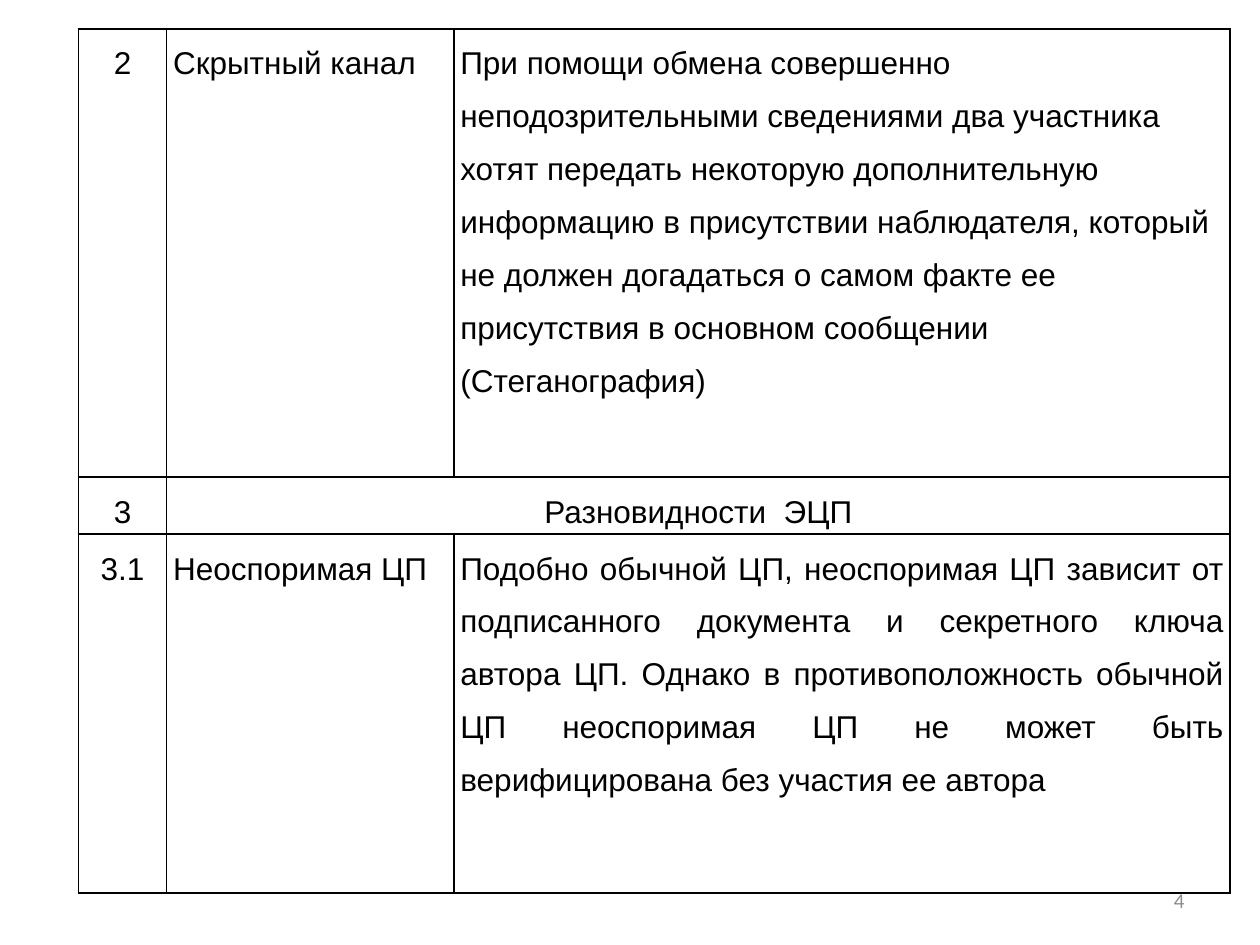
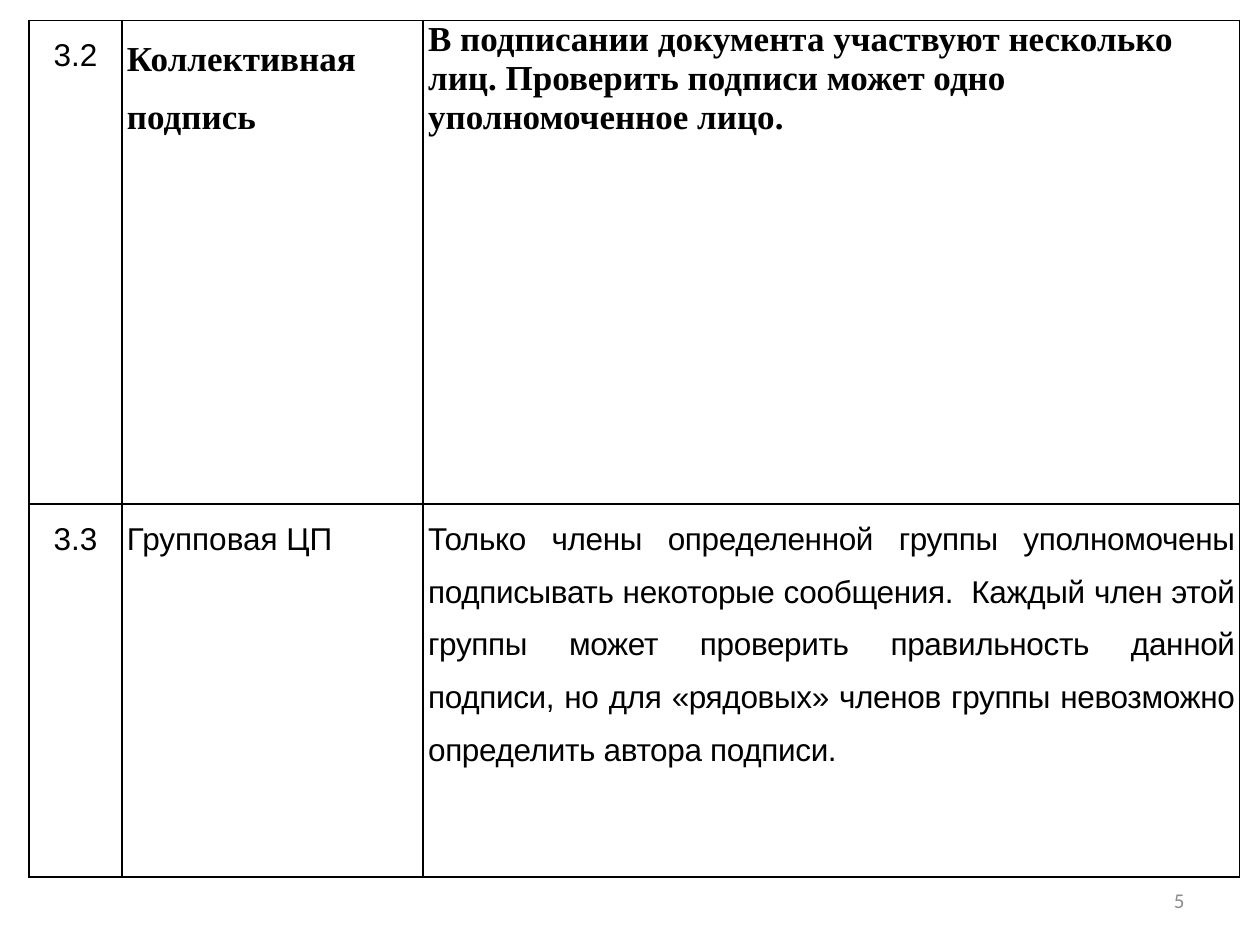
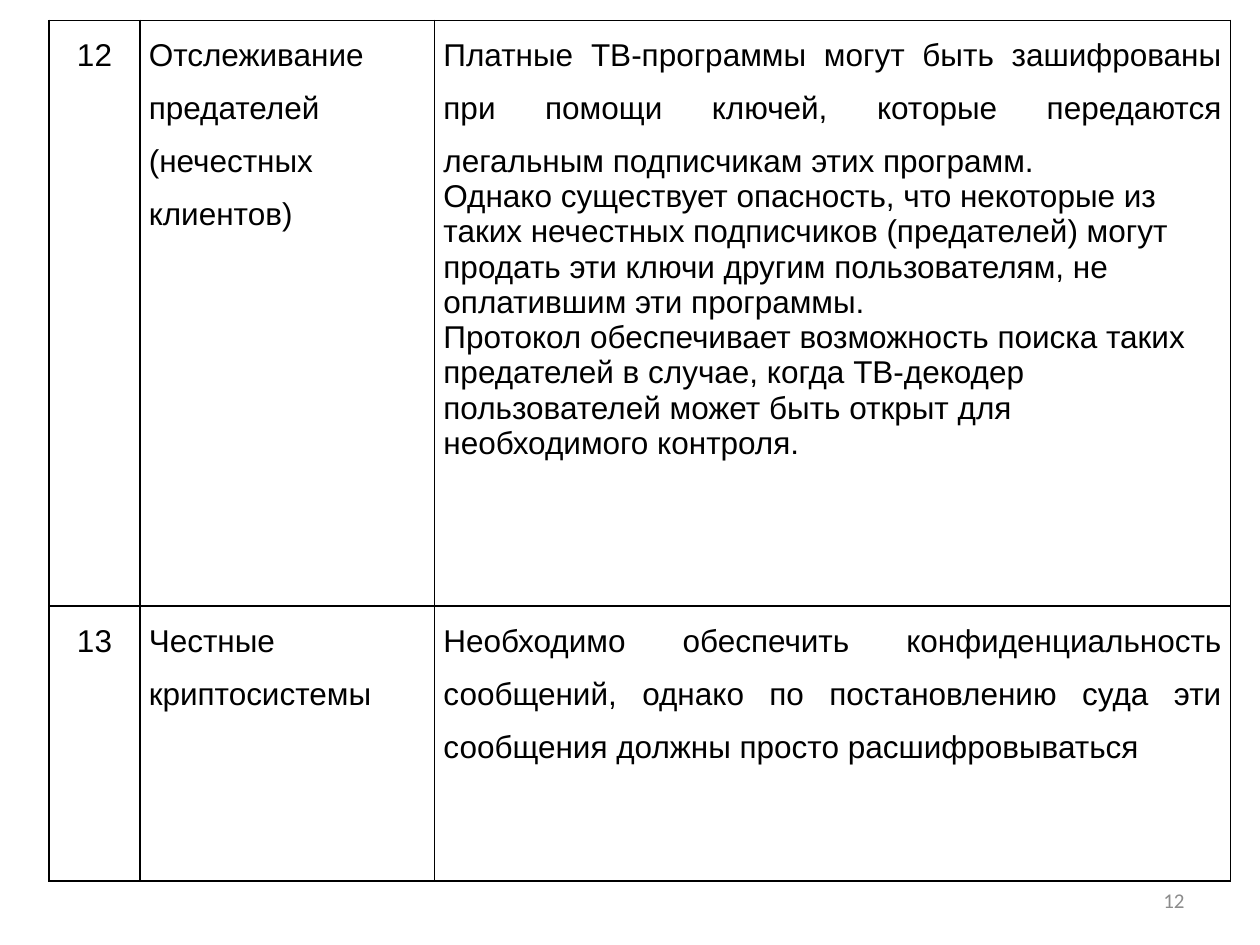
from lxml import etree
from pptx import Presentation
from pptx.dml.color import RGBColor
from pptx.enum.text import MSO_ANCHOR, PP_ALIGN
from pptx.oxml.ns import qn
from pptx.util import Cm, Pt

LEFT, CENTER, RIGHT, JUSTIFY = PP_ALIGN.LEFT, PP_ALIGN.CENTER, PP_ALIGN.RIGHT, PP_ALIGN.JUSTIFY
MIDDLE = MSO_ANCHOR.MIDDLE

COLORS = {"ink": "000000", "border": "000000", "page number": "8C8C8C"}
COLUMN_ALIGNS = (CENTER, LEFT, JUSTIFY)
BORDER_SIDES = ("a:lnL", "a:lnR", "a:lnT", "a:lnB")
BLANK_LAYOUT = 6

SERIF = {"font": "Times New Roman", "size": 20, "bold": True}
PLAIN = {"align": LEFT, "line_spacing": None}

SLIDES = [
    {
        "number": "4",
        "origin": (1.58, 0.58),
        "columns": (1.78, 5.79, 15.65),
        "heights": (9.04, 1.14, 7.24),
        "inset": 0.13,
        "rows": [
            ["2", "Скрытный канал",
             [("При помощи обмена совершенно неподозрительными сведениями два участника "
               "хотят передать некоторую дополнительную информацию в присутствии "
               "наблюдателя, который не должен догадаться о самом факте ее присутствия "
               "в основном сообщении (Стеганография)", {"align": LEFT})]],
            ["3", [("Разновидности  ЭЦП", {"align": CENTER})]],
            ["3.1", "Неоспоримая ЦП",
             "Подобно обычной ЦП, неоспоримая ЦП зависит от подписанного документа и "
             "секретного ключа автора ЦП. Однако в противоположность обычной ЦП "
             "неоспоримая ЦП не может быть верифицирована без участия ее автора"],
        ],
    },
    {
        "number": "5",
        "origin": (0.58, 0.41),
        "columns": (1.88, 6.07, 16.46),
        "heights": (9.75, 7.52),
        "inset": 0.1,
        "rows": [
            ["3.2", [("Коллективная подпись", SERIF)],
             [("В подписании документа участвуют несколько лиц. Проверить подписи "
               "может одно уполномоченное лицо.", {**SERIF, **PLAIN})]],
            ["3.3", "Групповая ЦП",
             [("Только члены определенной группы уполномочены подписывать некоторые "
               "сообщения.  Каждый член этой группы может проверить правильность данной "
               "подписи, но для «рядовых» членов группы невозможно определить автора "
               "подписи. ", {"tracking": -0.2})]],
        ],
    },
    {
        "number": "12",
        "origin": (0.99, 0.41),
        "columns": (1.83, 5.94, 16.05),
        "heights": (11.81, 5.54),
        "inset": 0.18,
        "rows": [
            ["12",
             [("Отслеживание", {}), ("предателей", {}), ("(нечестных клиентов)", {})],
             [("Платные TВ-программы могут быть зашифрованы при помощи ключей, которые "
               "передаются легальным подписчикам этих программ.", {}),
              ("Однако существует опасность, что некоторые из таких нечестных "
               "подписчиков (предателей) могут продать эти ключи другим пользователям, "
               "не оплатившим эти программы.", PLAIN),
              ("Протокол обеспечивает возможность поиска таких предателей в случае, "
               "когда TВ-декодер пользователей может быть открыт для необходимого "
               "контроля.", PLAIN)]],
            ["13", "Честные криптосистемы",
             "Необходимо обеспечить конфиденциальность сообщений, однако по "
             "постановлению суда эти сообщения должны просто расшифровываться"],
        ],
    },
]


def write(paragraph, text, *, font="Arial", size=18, color="ink", bold=False,
          align=LEFT, line_spacing=1.5, tracking=0):
    paragraph.alignment = align
    paragraph.line_spacing = line_spacing
    run = paragraph.add_run()
    run.text = text
    run.font.name = font
    run.font.size = Pt(size)
    run.font.bold = bold
    run.font.color.rgb = RGBColor.from_string(COLORS[color])
    if tracking:
        run.font._element.set("spc", str(round(tracking * 100)))


def outline(cell):
    properties = cell._tc.get_or_add_tcPr()
    for side in BORDER_SIDES:
        line = etree.SubElement(properties, qn(side), w=str(Pt(1)))
        fill = etree.SubElement(line, qn("a:solidFill"))
        etree.SubElement(fill, qn("a:srgbClr"), val=COLORS["border"])
    cell.fill.background()


def fill_cell(cell, content, align):
    paragraphs = [(content, {})] if isinstance(content, str) else content
    frame = cell.text_frame
    for index, (text, style) in enumerate(paragraphs):
        paragraph = frame.add_paragraph() if index else frame.paragraphs[0]
        write(paragraph, text, **{"align": align, **style})


def add_page_number(slide, number):
    frame = slide.shapes.add_textbox(Cm(18.2), Cm(17.65), Cm(5.93), Cm(1.01)).text_frame
    frame.word_wrap = True
    frame.vertical_anchor = MIDDLE
    write(frame.paragraphs[0], number, font="Calibri", size=12, color="page number",
          align=RIGHT, line_spacing=None)


def add_protocol_table(slide, content):
    rows, columns, heights = content["rows"], content["columns"], content["heights"]
    left, top = content["origin"]
    table = slide.shapes.add_table(len(rows), len(columns), Cm(left), Cm(top),
                                   Cm(sum(columns)), Cm(sum(heights))).table
    table.first_row = table.horz_banding = False
    for column, width in zip(table.columns, columns):
        column.width = Cm(width)
    for row, height in zip(table.rows, heights):
        row.height = Cm(height)
    for cell in table.iter_cells():
        cell.margin_left = cell.margin_right = Cm(content["inset"])
        cell.margin_top = cell.margin_bottom = 0
        outline(cell)
    for r, row in enumerate(rows):
        if len(row) < len(columns):
            table.cell(r, len(row) - 1).merge(table.cell(r, len(columns) - 1))
        for c, entry in enumerate(row):
            fill_cell(table.cell(r, c), entry, COLUMN_ALIGNS[c])


def main():
    prs = Presentation()
    prs.slide_width, prs.slide_height = Cm(25.4), Cm(19.05)
    for content in SLIDES:
        slide = prs.slides.add_slide(prs.slide_layouts[BLANK_LAYOUT])
        add_page_number(slide, content["number"])
        add_protocol_table(slide, content)
    prs.save("out.pptx")


if __name__ == "__main__":
    main()
